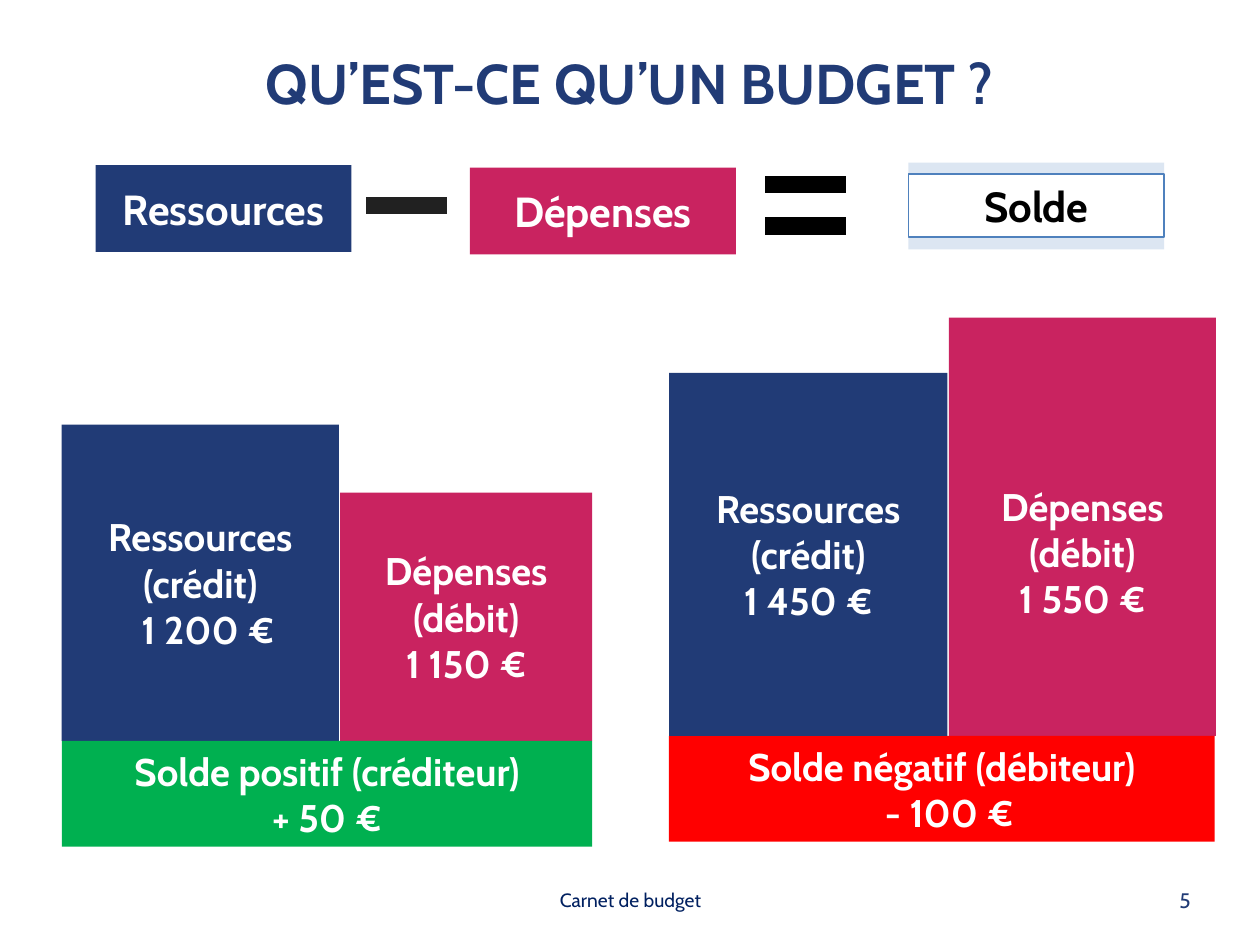
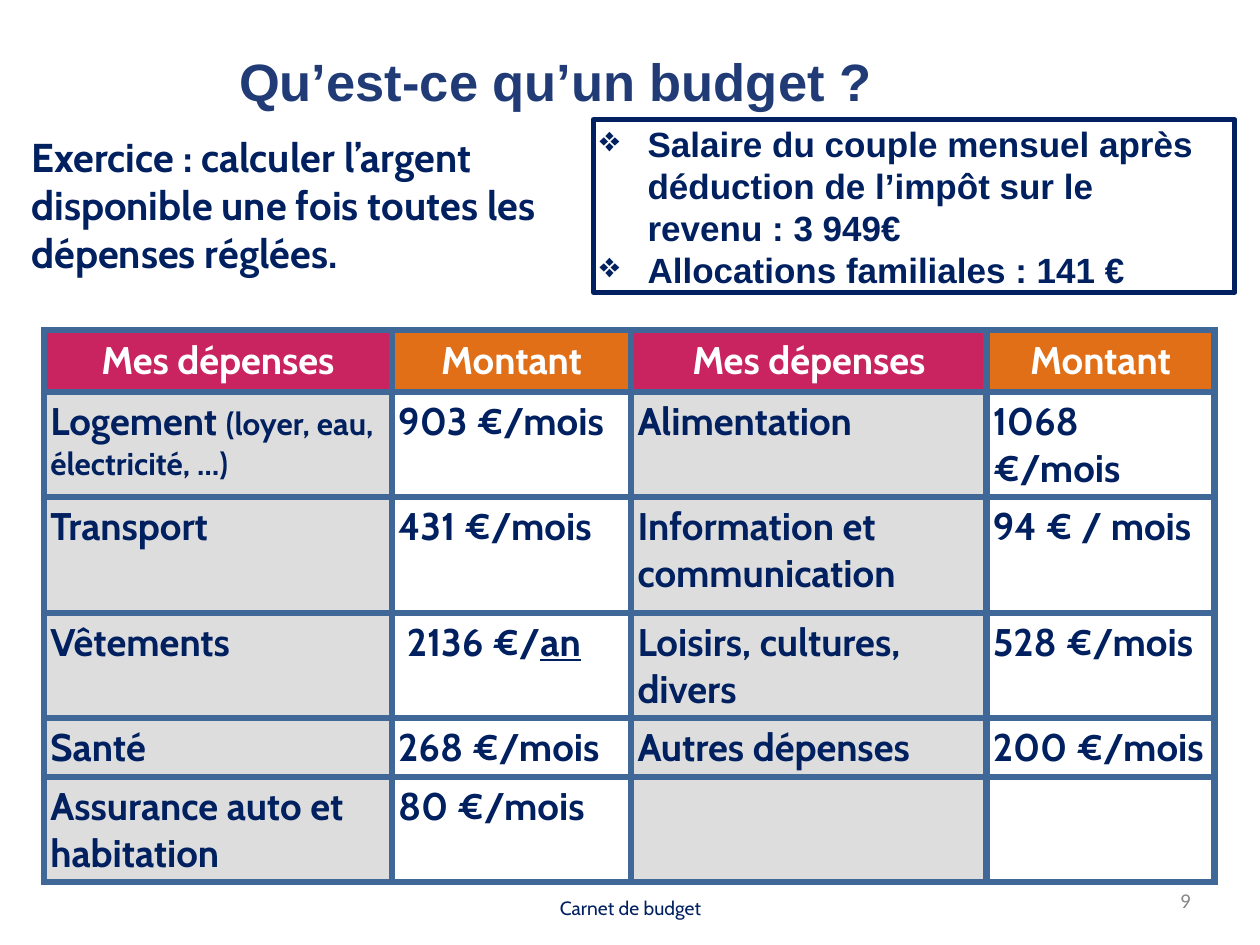
from lxml import etree
from pptx import Presentation
from pptx.dml.color import RGBColor
from pptx.enum.shapes import MSO_SHAPE
from pptx.enum.text import MSO_ANCHOR, PP_ALIGN
from pptx.oxml.ns import qn
from pptx.util import Inches, Pt

RECTANGLE = MSO_SHAPE.RECTANGLE
TOP, MIDDLE = MSO_ANCHOR.TOP, MSO_ANCHOR.MIDDLE
LEFT, CENTER, RIGHT = PP_ALIGN.LEFT, PP_ALIGN.CENTER, PP_ALIGN.RIGHT

BLUE = RGBColor(0x21, 0x3B, 0x76)
NAVY = RGBColor(0x00, 0x20, 0x60)
PINK = RGBColor(0xC9, 0x23, 0x60)
ORANGE = RGBColor(0xE0, 0x6F, 0x17)
GREEN = RGBColor(0x00, 0xB0, 0x50)
RED = RGBColor(0xFF, 0x00, 0x00)
WHITE = RGBColor(0xFF, 0xFF, 0xFF)
BLACK = RGBColor(0x00, 0x00, 0x00)
CHARCOAL = RGBColor(0x21, 0x21, 0x21)
GREY = RGBColor(0x88, 0x88, 0x88)
LIGHT_GREY = RGBColor(0xDD, 0xDD, 0xDD)
PALE_BLUE = RGBColor(0xDC, 0xE6, 0xF2)
OUTLINE_BLUE = RGBColor(0x4F, 0x81, 0xBD)
GRID_BLUE = RGBColor(0x3F, 0x67, 0x97)

MAIN_FONT = "Cabin"
INSET = 0.05


class Deck:
    """Shared style and the slide being filled."""

    def __init__(self):
        self.prs = Presentation()
        self.prs.slide_width, self.prs.slide_height = Inches(10), Inches(7.5)
        self.slide = None

    def new_slide(self):
        self.slide = self.prs.slides.add_slide(self.prs.slide_layouts[6])

    def style_run(self, run, size, color, bold=True, font=MAIN_FONT):
        run.font.name, run.font.size = font, Pt(size)
        run.font.bold, run.font.color.rgb = bold, color

    def fill_frame(self, frame, text, size, color, align=CENTER, anchor=MIDDLE,
                   bold=True, font=MAIN_FONT, top_inset=INSET):
        frame.word_wrap = True
        frame.vertical_anchor = anchor
        frame.margin_left = frame.margin_right = frame.margin_bottom = Inches(INSET)
        frame.margin_top = Inches(top_inset)
        frame.text = text
        for paragraph in frame.paragraphs:
            paragraph.alignment = align
            for run in paragraph.runs:
                self.style_run(run, size, color, bold, font)

    def text(self, box, text, size, color, **style):
        frame = self.slide.shapes.add_textbox(*map(Inches, box)).text_frame
        self.fill_frame(frame, text, size, color, **style)
        return frame

    def paint(self, shape, fill, line=None, width=1):
        shape.shadow.inherit = False
        if fill is None:
            shape.fill.background()
        else:
            shape.fill.solid()
            shape.fill.fore_color.rgb = fill
        if line is None:
            shape.line.fill.background()
        else:
            shape.line.color.rgb, shape.line.width = line, Pt(width)

    def block(self, box, fill, text="", size=22, color=WHITE, line=None, width=1,
              last_indent=0, **style):
        shape = self.slide.shapes.add_shape(RECTANGLE, *map(Inches, box))
        self.paint(shape, fill, line, width)
        if text:
            self.fill_frame(shape.text_frame, text, size, color, **style)
        if last_indent:
            self.indent(shape.text_frame.paragraphs[-1], last_indent)

    def indent(self, paragraph, left, first=0):
        properties = paragraph._p.get_or_add_pPr()
        properties.set("marL", str(Inches(left)))
        properties.set("indent", str(Inches(first)))
        return properties

    def bullets(self, frame, mark, hang):
        for paragraph in frame.paragraphs:
            properties = self.indent(paragraph, hang, -hang)
            etree.SubElement(properties, qn("a:buChar")).set("char", mark)

    def equals_sign(self, left, tops, width, height):
        right = left + width
        builder = self.slide.shapes.build_freeform(Inches(left), Inches(tops[0]))
        for top in tops:
            bottom = top + height
            builder.move_to(Inches(left), Inches(top))
            corners = [(right, top), (right, bottom), (left, bottom)]
            builder.add_line_segments([(Inches(x), Inches(y)) for x, y in corners])
        self.paint(builder.convert_to_shape(), BLACK, WHITE, 2)

    def footer(self, top, number, font, color):
        self.text((3.42, top, 3.17, 0.29), "Carnet de budget", 11, NAVY, bold=False)
        self.text((9.2, 7, 0.3, 0.29), number, 12, color,
                  align=RIGHT, bold=False, font=font)

    def border(self, cell, color, width):
        properties = cell._tc.get_or_add_tcPr()
        for side in ("a:lnL", "a:lnR", "a:lnT", "a:lnB"):
            line = etree.SubElement(properties, qn(side), w=str(Pt(width)))
            fill = etree.SubElement(line, qn("a:solidFill"))
            etree.SubElement(fill, qn("a:srgbClr"), val=str(color))

    def table(self, left, top, widths, heights, rows, header_fills, body_fills):
        table = self.slide.shapes.add_table(
            len(rows), len(widths), Inches(left), Inches(top),
            Inches(sum(widths)), Inches(sum(heights))).table
        table.first_row = table.horz_banding = False
        for column, width in zip(table.columns, widths):
            column.width = Inches(width)
        for r, (height, row) in enumerate(zip(heights, rows)):
            table.rows[r].height = Inches(height)
            header = r == 0
            fills = header_fills if header else body_fills
            for c, (text, fill) in enumerate(zip(row, fills)):
                cell = table.cell(r, c)
                self.border(cell, GRID_BLUE, 4)
                cell.fill.solid()
                cell.fill.fore_color.rgb = fill
                cell.margin_left = cell.margin_right = Inches(INSET)
                cell.margin_top = cell.margin_bottom = Inches(INSET)
                cell.vertical_anchor = MIDDLE if header else TOP
                paragraph = cell.text_frame.paragraphs[0]
                paragraph.text = text
                paragraph.alignment = CENTER if header else LEFT
                for run in paragraph.runs:
                    self.style_run(run, 22, WHITE if header else NAVY)
        return table

    def append_run(self, cell, text, size):
        run = cell.text_frame.paragraphs[0].add_run()
        run.text = text
        self.style_run(run, size, NAVY)
        return run


def budget_definition(deck):
    deck.new_slide()
    deck.text((1.38, 0.29, 7.24, 0.72), "QU’EST-CE QU’UN BUDGET ?", 32, BLUE)
    deck.footer(7, "5", MAIN_FONT, BLUE)

    # Positive balance
    deck.block((0.49, 3.37, 2.2, 2.51), BLUE, "Ressources\n(crédit)\n1 200 €",
               last_indent=0.12)
    deck.block((2.7, 3.91, 2, 1.97), PINK, "Dépenses\n(débit)\n1 150 €")
    deck.block((0.49, 5.88, 4.21, 0.84), GREEN, "Solde positif (créditeur)\n+ 50 €")

    # Negative balance
    deck.block((7.53, 2.52, 2.12, 3.32), PINK, "Dépenses\n(débit)\n1 550 €",
               top_inset=0.45)
    deck.block((5.31, 5.84, 4.33, 0.84), RED, "Solde négatif (débiteur)\n- 100 €",
               last_indent=0.12)
    deck.block((5.31, 2.96, 2.21, 2.88), BLUE, "Ressources\n(crédit)\n1 450 €")

    # Resources - expenses = balance
    deck.block((3.73, 1.33, 2.11, 0.69), PINK, "Dépenses", 24)
    deck.block((0.76, 1.31, 2.03, 0.69), BLUE, "Ressources", 24)
    deck.block((2.89, 1.55, 0.67, 0.16), CHARCOAL, line=WHITE, width=2)
    deck.equals_sign(6.06, (1.38, 1.71), 0.67, 0.17)
    deck.block((7.21, 1.29, 2.03, 0.69), PALE_BLUE)
    deck.block((7.21, 1.38, 2.03, 0.5), WHITE, "Solde", 24, BLACK, line=OUTLINE_BLUE)


def budget_exercise(deck):
    deck.new_slide()
    deck.text((0.59, 0.34, 7.64, 0.61), "Qu’est-ce qu’un budget ?", 30, BLUE,
              anchor=TOP, font="Arial")
    task = deck.text((0.2, 1, 4.39, 1.26),
                     "Exercice : calculer l’argent disponible une fois toutes "
                     "les dépenses réglées.", 23, NAVY, align=LEFT, anchor=TOP)
    task.paragraphs[0].space_before = Pt(5)

    # Household income
    deck.block((4.71, 0.95, 5.09, 1.37), None, line=NAVY, width=3)
    income = deck.text((4.71, 0.91, 4.92, 1.45),
                       "Salaire du couple mensuel après déduction de l’impôt sur le "
                       "revenu : 3 949€\nAllocations familiales : 141 €",
                       20, NAVY, align=LEFT, font="Arial")
    deck.bullets(income, "❖", 0.38)

    # Expenses
    rows = [
        ("Mes dépenses", "Montant") * 2,
        ("Logement ", "903 €/mois", "Alimentation", "1068 €/mois"),
        ("Transport", "431 €/mois", "Information et communication", "94 € / mois"),
        ("Vêtements", " 2136 €/", "Loisirs, cultures, divers", "528 €/mois"),
        ("Santé", "268 €/mois", "Autres dépenses", "200 €/mois"),
        ("Assurance auto et habitation", "80 €/mois", "", ""),
    ]
    expenses = deck.table(0.35, 2.62, (2.76, 1.9, 2.82, 1.81),
                          (0.49, 0.83, 0.92, 0.83, 0.47, 0.83), rows,
                          (PINK, ORANGE) * 2, (LIGHT_GREY, WHITE) * 2)
    deck.append_run(expenses.cell(1, 0), "(loyer, eau, électricité, …)", 18)
    deck.append_run(expenses.cell(3, 1), "an", 22).font.underline = True

    deck.footer(7.06, "9", "Calibri", GREY)


def main():
    deck = Deck()
    budget_definition(deck)
    budget_exercise(deck)
    deck.prs.save("out.pptx")


if __name__ == "__main__":
    main()
